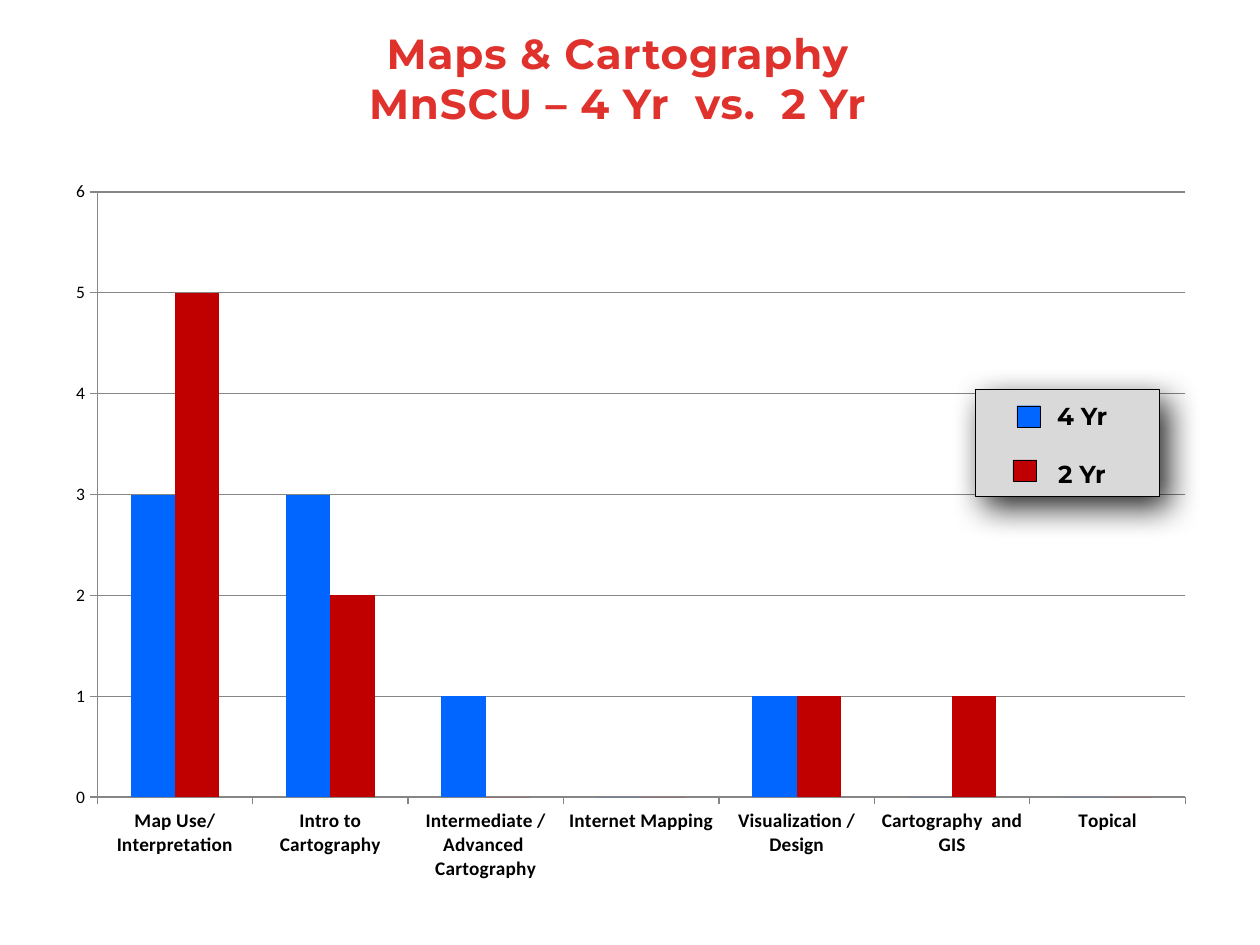
from dataclasses import dataclass

from lxml import etree
from pptx import Presentation
from pptx.chart.data import CategoryChartData
from pptx.dml.color import RGBColor
from pptx.enum.chart import XL_CHART_TYPE, XL_TICK_MARK
from pptx.enum.shapes import MSO_SHAPE
from pptx.enum.text import MSO_AUTO_SIZE, PP_ALIGN
from pptx.oxml.ns import qn
from pptx.util import Cm, Pt

COLUMN = XL_CHART_TYPE.COLUMN_CLUSTERED
OUT = XL_TICK_MARK.OUTSIDE
RECT = MSO_SHAPE.RECTANGLE
GROW = MSO_AUTO_SIZE.SHAPE_TO_FIT_TEXT
LEFT, CENTER = PP_ALIGN.LEFT, PP_ALIGN.CENTER


@dataclass(frozen=True)
class Theme:
    black: RGBColor = RGBColor.from_string("000000")
    red: RGBColor = RGBColor.from_string("E0322D")
    gray: RGBColor = RGBColor.from_string("868686")
    panel: RGBColor = RGBColor.from_string("D9D9D9")
    four: RGBColor = RGBColor.from_string("0066FF")
    two: RGBColor = RGBColor.from_string("C00000")
    head: Pt = Pt(24)
    key: Pt = Pt(14)
    label: Pt = Pt(11)
    tick: Pt = Pt(10)
    face: str = "Montserrat"
    plain: str = "Calibri"


theme = Theme()


def write(text, *, home, at, size, color, align=LEFT, wrap=False, space=0):
    frame = home.add_textbox(*map(Cm, at)).text_frame
    frame.word_wrap = wrap
    frame.auto_size = GROW
    for i, line in enumerate(text.split("\n")):
        para = frame.paragraphs[0] if i == 0 else frame.add_paragraph()
        para.alignment = align
        run = para.add_run()
        run.text = line
        font = run.font
        font.name, font.size, font.bold = theme.face, size, True
        font.color.rgb = color
        if space:
            run._r.get_or_add_rPr().set("spc", str(space))


def block(home, at, fill):
    shape = home.add_shape(RECT, *map(Cm, at))
    shape.shadow.inherit = False
    shape.fill.solid()
    shape.fill.fore_color.rgb = fill
    shape.line.color.rgb = theme.black
    shape.line.width = Pt(0.25)
    return shape


deck = Presentation()
deck.slide_width, deck.slide_height = Cm(25.4), Cm(19.05)
slide = deck.slides.add_slide(deck.slide_layouts[6])

data = CategoryChartData()
data.categories = [
    "Map Use/Interpretation",
    "Intro to Cartography",
    "Intermediate / Advanced  Cartography",
    "Internet Mapping",
    "Visualization / Design",
    "Cartography  and GIS",
    "Topical",
]
data.add_series("Series 1", (3, 3, 1, 0, 1, 0, 0))
data.add_series("Series 2", (5, 2, 0, 0, 1, 1, 0))
spot = map(Cm, (1.07, 3.38, 23.29, 14.66))
chart = slide.shapes.add_chart(COLUMN, *spot, data).chart
chart.has_legend = False
chart.has_title = False
chart.font.name, chart.font.size = theme.plain, theme.tick
chart.font.color.rgb = theme.black

plot = chart.plots[0]
plot.gap_width, plot.overlap = 150, 0
plot.vary_by_categories = False
for series, color in zip(plot.series, (theme.four, theme.two)):
    series.format.fill.solid()
    series.format.fill.fore_color.rgb = color

cats, vals = chart.category_axis, chart.value_axis
vals.minimum_scale, vals.maximum_scale, vals.major_unit = 0, 6, 1
vals.has_major_gridlines = True
for axis in (cats, vals):
    axis.major_tick_mark = OUT
    axis.format.line.color.rgb = theme.gray
vals.major_gridlines.format.line.color.rgb = theme.gray
font = cats.tick_labels.font
font.size, font.bold = theme.label, True

write("Maps & Cartography\nMnSCU – 4 Yr  vs.  2 Yr", home=slide.shapes,
      at=(5.21, 0.43, 14.48, 2.31), size=theme.head, color=theme.red,
      align=CENTER, wrap=True, space=50)

key = slide.shapes.add_group_shape().shapes
panel = block(key, (19.66, 7.85, 3.71, 2.16), theme.panel)
glow = panel._element.spPr.find(qn("a:effectLst"))
shade = etree.SubElement(glow, qn("a:outerShdw"), blurRad=str(Pt(19)),
                         dist=str(Pt(8)), dir="3000000", algn="tl",
                         rotWithShape="0")
tint = etree.SubElement(shade, qn("a:srgbClr"), val=str(theme.black))
etree.SubElement(tint, qn("a:alpha"), val="86000")

rows = (
    ("4 Yr", theme.four, (20.5, 8.18), (21.06, 7.95)),
    ("2 Yr", theme.two, (20.42, 9.27), (21.08, 9.12)),
)
for name, color, mark, _ in rows:
    block(key, (*mark, 0.48, 0.43), color)
for name, _, _, spot in rows:
    write(name, home=key, at=(*spot, 1.63, 0.86), size=theme.key,
          color=theme.black)

deck.save("out.pptx")
